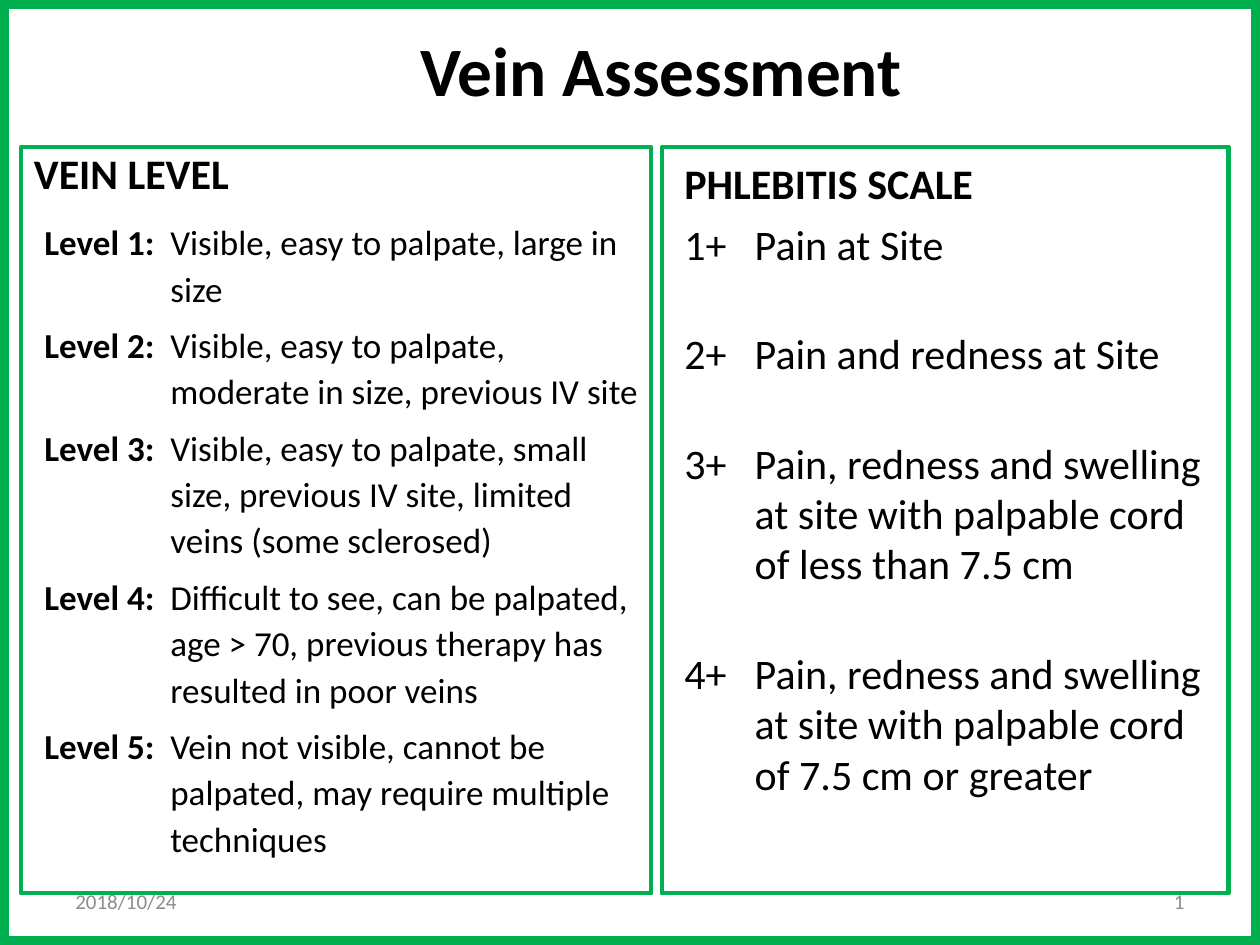
from lxml import etree
from pptx import Presentation
from pptx import util as u
from pptx.dml.color import RGBColor
from pptx.enum import shapes, text
from pptx.oxml.ns import qn

COLORS = {"ink": "000000", "green": "00B050", "muted": "8C8C8C"}
FONT = "Calibri"

# Content
TITLE = "Vein Assessment"
LEVELS = [
    ("Level 1:", "Visible, easy to palpate, large in size"),
    ("Level 2:", "Visible, easy to palpate, moderate in size, previous IV site"),
    ("Level 3:", "Visible, easy to palpate, small size, previous IV site, "
                 "limited veins (some sclerosed)"),
    ("Level 4:", "Difficult to see, can be palpated, age > 70, previous therapy "
                 "has resulted in poor veins"),
    ("Level 5:", "Vein not visible, cannot be palpated, may require multiple techniques"),
]
PHLEBITIS = [
    ("1+", "Pain at Site"),
    ("2+", "Pain and redness at Site"),
    ("3+", "Pain, redness and swelling at site with palpable cord of less than 7.5 cm"),
    ("4+", "Pain, redness and swelling at site with palpable cord of 7.5 cm or greater"),
]

# Geometry in cm: left, top, width, height
WIDTH, HEIGHT = 25.4, 19.05
FRAMES = [
    ((0, 0, WIDTH, HEIGHT), 10.75),
    ((13.34, 2.97, 11.43, 15.04), 2.5),
    ((0.43, 2.97, 12.7, 15.04), 2.5),
]
FOOTERS = [
    ("2018/10/24", 1.27, text.PP_ALIGN.LEFT),
    ("1", 18.21, text.PP_ALIGN.RIGHT),
]


def place(box, area, anchor):
    box.left, box.top, box.width, box.height = map(u.Cm, area)
    frame = box.text_frame
    frame.word_wrap = True
    frame.auto_size = text.MSO_AUTO_SIZE.NONE
    frame.vertical_anchor = anchor
    return frame


def add_span(para, words, size, bold=False, color="ink"):
    span = para.add_run()
    span.text = words
    span.font.name = FONT
    span.font.size = u.Pt(size)
    span.font.bold = bold
    span.font.color.rgb = RGBColor.from_string(COLORS[color])


def fill_list(frame, items, size, hang, before, after, spacing, bold):
    """Labels hang to the left of their descriptions, which start at a tab."""
    for number, (label, description) in enumerate(items):
        para = frame.add_paragraph() if number else frame.paragraphs[0]
        para.line_spacing = spacing
        para.space_before, para.space_after = u.Pt(before), u.Pt(after)
        properties = para._p.get_or_add_pPr()
        properties.set("marL", str(u.Cm(hang)))
        properties.set("indent", str(-u.Cm(hang)))
        etree.SubElement(properties, qn("a:buNone"))
        add_span(para, label, size, bold)
        add_span(para, "\t" + description, size)


deck = Presentation()
deck.slide_width, deck.slide_height = u.Cm(WIDTH), u.Cm(HEIGHT)
page = deck.slides.add_slide(deck.slide_layouts.get_by_name("Comparison"))
holders = page.placeholders

# Title and column headings
middle, bottom, top = (text.MSO_ANCHOR.MIDDLE, text.MSO_ANCHOR.BOTTOM,
                       text.MSO_ANCHOR.TOP)
HEADINGS = [
    (0, TITLE, (1.9, 0.43, 22.86, 1.9), middle, 39.6, text.PP_ALIGN.CENTER),
    (1, "VEIN LEVEL", (0.43, 2.34, 11.23, 1.78), bottom, 24, text.PP_ALIGN.LEFT),
    (3, "PHLEBITIS SCALE", (13.54, 2.54, 11.23, 1.78), bottom, 24, text.PP_ALIGN.LEFT),
]
for index, words, area, anchor, size, align in HEADINGS:
    para = place(holders[index], area, anchor).paragraphs[0]
    para.alignment = align
    add_span(para, words, size, bold=True)

# Column lists
levels = place(holders[2], (0.64, 4.24, 12.5, 11.86), top)
levels.margin_right = u.Cm(0.2)
fill_list(levels, LEVELS, 20, hang=2.54, before=0, after=6, spacing=1.1, bold=True)
scale = place(holders[4], (13.54, 4.27, 11.23, 10.97), top)
fill_list(scale, PHLEBITIS, 24, hang=1.42, before=4.8, after=29, spacing=1.0, bold=False)

# Green frames
for area, weight in FRAMES:
    border = page.shapes.add_shape(shapes.MSO_SHAPE.RECTANGLE, *map(u.Cm, area))
    border.shadow.inherit = False
    border.fill.background()
    border.line.color.rgb = RGBColor.from_string(COLORS["green"])
    border.line.width = u.Pt(weight)

# Date and page number
for words, left, align in FOOTERS:
    area = (left, 17.65, 5.92, 1.02)
    box = page.shapes.add_textbox(*map(u.Cm, area))
    para = place(box, area, middle).paragraphs[0]
    para.alignment = align
    add_span(para, words, 12, color="muted")

deck.save("out.pptx")
